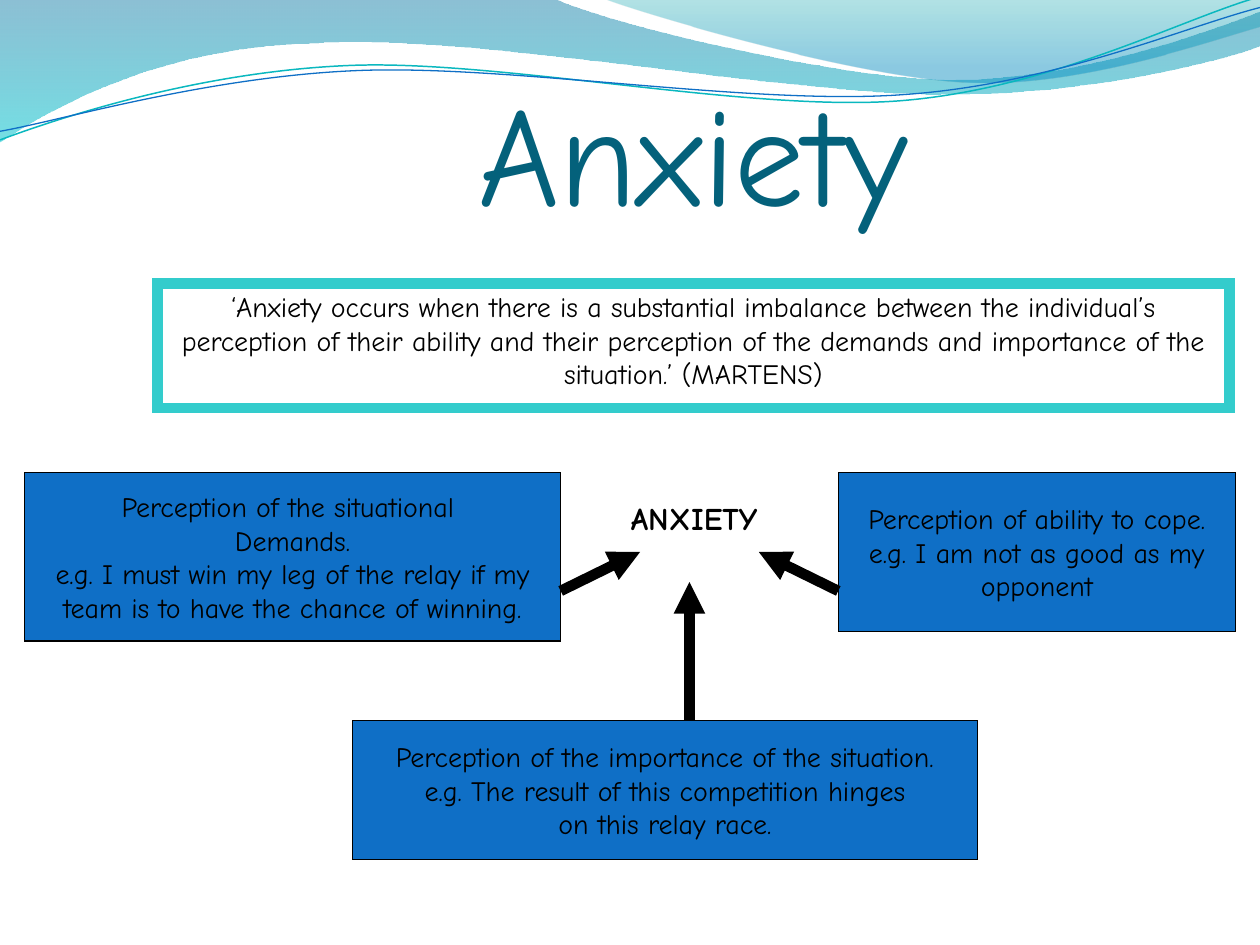
"""Build the Anxiety slide: wave header, quoted definition and three causes pointing to anxiety."""
from lxml.etree import SubElement
from pptx import Presentation
from pptx.dml.color import RGBColor
from pptx.enum.shapes import MSO_CONNECTOR, MSO_SHAPE
from pptx.enum.text import MSO_ANCHOR, PP_ALIGN
from pptx.oxml.ns import qn
from pptx.util import Pt


def color(value):
    return RGBColor.from_string(value)


def write(frame, lines, size, shade="000000", bold=False, anchor=MSO_ANCHOR.TOP, wrap=True):
    frame.text = "\n".join(lines)
    frame.word_wrap = wrap
    frame.vertical_anchor = anchor
    for paragraph in frame.paragraphs:
        paragraph.alignment = PP_ALIGN.CENTER
        paragraph.font.name = "Comic Neue"
        paragraph.font.size = Pt(size)
        paragraph.font.bold = bold
        paragraph.font.color.rgb = color(shade)


prs = Presentation()
prs.slide_width, prs.slide_height = Pt(720), Pt(540)
slide = prs.slides.add_slide(prs.slide_layouts[5])
shapes = slide.shapes

band = [
    [(0, 0)], [(316.8, -0.7)],
    [(342.7, 12.2), (478.1, 45.4), (545.8, 45.4)],
    [(614.2, 45.4), (689.8, 18.7), (720, 6.5)],
    [(720.7, 25.9)],
    [(707.8, 31.7), (626.4, 54.7), (537.1, 54)],
    [(447.8, 54), (275, 20.2), (185, 24.5)],
    [(92.9, 25.9), (33.1, 59.8), (-0.7, 81.4)],
]
veil = [
    [(344.9, -0.7)],
    [(366.5, 7.9), (491, 44.6), (553.7, 46.8)],
    [(616.3, 49.7), (691.9, 23), (720, 15.1)],
    [(720, 0)],
]
teal_wave = [
    [(-1.4, 63)],
    [(33.8, 51.7), (114.1, 29.4), (199.8, 29.9)],
    [(284.9, 30.3), (425.8, 67.3), (512.4, 64.9)],
    [(599, 62.4), (676.5, 25.7), (720.2, 15.5)],
]
blue_wave = [
    [(-1.1, 58)],
    [(32.9, 53.8), (118.3, 32.5), (204.1, 33)],
    [(290.6, 33.4), (428.9, 63.8), (515.5, 61.4)],
    [(602, 59.6), (678.5, 30.1), (721.4, 21.3)],
]
waves = [
    (band, [(0, "0074A1", 45), (1, "00C6CF", 55)], None),
    (veil, [(0, "00A1A9", 30), (0.8, "008BBF", 45)], None),
    (teal_wave, None, ("0AB8BF", 0.85)),
    (blue_wave, None, ("0F6FC6", 0.75)),
]
for segments, stops, stroke in waves:
    joints = [(Pt(x), Pt(y)) for x, y in (segment[-1] for segment in segments)]
    builder = shapes.build_freeform(*joints[0])
    builder.add_line_segments(joints[1:], close=stops is not None)
    wave = builder.convert_to_shape()
    wave.shadow.inherit = False
    straights = list(wave._element.iter(qn("a:lnTo")))
    for straight, segment in zip(straights, segments[1:]):
        if len(segment) == 3:
            curve = SubElement(straight.getparent(), qn("a:cubicBezTo"))
            for x, y in segment:
                point = SubElement(curve, qn("a:pt"))
                point.set("x", str(Pt(x) - wave.left))
                point.set("y", str(Pt(y) - wave.top))
            straight.getparent().replace(straight, curve)
    if stops:
        wave.line.fill.background()
        wave.fill.gradient()
        wave.fill.gradient_angle = 270
        for stop, (position, shade, opacity) in zip(wave.fill.gradient_stops, stops):
            stop.position = position
            stop.color.rgb = color(shade)
        for tint, (position, shade, opacity) in zip(wave._element.spPr.iter(qn("a:srgbClr")), stops):
            SubElement(tint, qn("a:alpha")).set("val", str(opacity * 1000))
    else:
        wave.rotation = 357.3
        wave.fill.background()
        wave.line.color.rgb = color(stroke[0])
        wave.line.width = Pt(stroke[1])

title = shapes.title
title.left, title.top, title.width, title.height = Pt(108), Pt(48), Pt(576), Pt(90)
write(title.text_frame, ["Anxiety"], 80, "04617B", anchor=MSO_ANCHOR.BOTTOM)
title.text_frame.paragraphs[0].line_spacing = 0.85

definition = (
    "‘Anxiety occurs when there is a substantial imbalance between the individual’s perception of "
    "their ability and their perception of the demands and importance of the situation.’ (MARTENS)"
)
demands = [
    "Perception of the situational ",
    "Demands.",
    "e.g. I must win my leg of the relay if my",
    "team is to have the chance of winning.",
]
importance = [
    "Perception of the importance of the situation.",
    "e.g. The result of this competition hinges",
    "on this relay race.",
]
ability = ["Perception of ability to cope.", "e.g. I am not as good as my", "opponent"]
boxes = [
    ([definition], (90, 162, 612.5, 71.2), None, "33CCCC", 6),
    (demands, (14.2, 270, 306, 96.3), "0F6FC6", "000000", 0.75),
    (importance, (201.4, 411.8, 357.2, 79.4), "0F6FC6", "000000", 0.75),
    (ability, (479, 270, 227, 90.8), "0F6FC6", "000000", 0.75),
]
for lines, bounds, fill, edge, weight in boxes:
    box = shapes.add_shape(MSO_SHAPE.RECTANGLE, *map(Pt, bounds))
    box.shadow.inherit = False
    box.line.color.rgb = color(edge)
    box.line.width = Pt(weight)
    SubElement(box.line._get_or_add_ln(), qn("a:miter")).set("lim", "800000")
    if fill:
        box.fill.solid()
        box.fill.fore_color.rgb = color(fill)
        write(box.text_frame, lines, 16, anchor=MSO_ANCHOR.MIDDLE, wrap=False)
    else:
        box.fill.background()
        write(box.text_frame, lines, 16)

outcome = shapes.add_textbox(Pt(343), Pt(281.5), Pt(107.3), Pt(28.8))
write(outcome.text_frame, ["ANXIETY"], 18, bold=True)

arrows = [
    (394, 411.8, 394, 332.6),
    (320.4, 337.7, 365.8, 315.4),
    (479, 337.7, 433.6, 315.4),
]
for ends in arrows:
    arrow = shapes.add_connector(MSO_CONNECTOR.STRAIGHT, *map(Pt, ends))
    arrow.line.color.rgb = color("000000")
    arrow.line.width = Pt(6)
    SubElement(arrow.line._get_or_add_ln(), qn("a:tailEnd")).set("type", "triangle")
    SubElement(arrow._element.spPr, qn("a:effectLst"))

prs.save("out.pptx")
